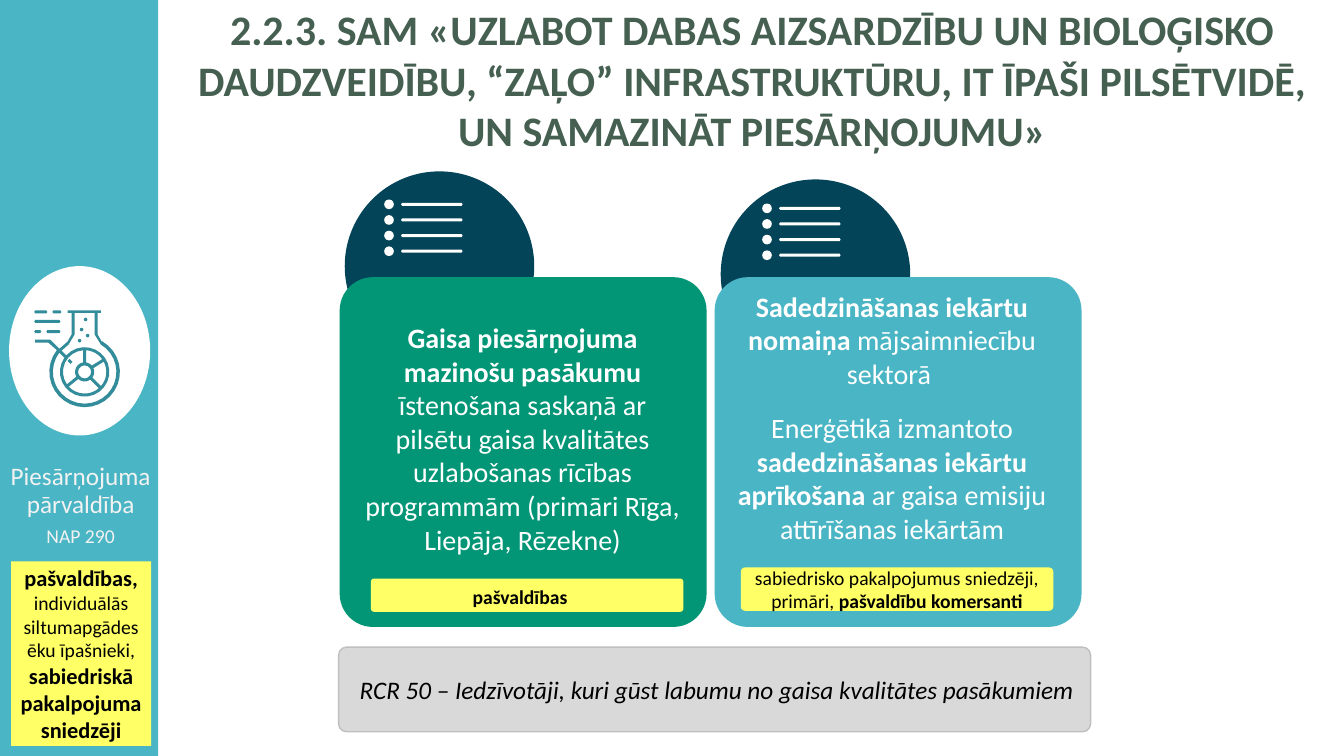
from dataclasses import dataclass
from math import cos, radians, sin

from pptx import Presentation
from pptx.dml.color import RGBColor
from pptx.enum.shapes import MSO_SHAPE
from pptx.enum.text import MSO_ANCHOR, PP_ALIGN
from pptx.util import Pt

PX = 9144  # 100 px to the inch


@dataclass(frozen=True)
class Theme:
    font: str = "Calibri"
    title: str = "455F51"
    navy: str = "044458"
    green: str = "029676"
    teal: str = "4AB5C4"
    dark_teal: str = "328C99"
    yellow: str = "FFFF66"
    grey: str = "D9D9D9"
    grey_line: str = "BFBFBF"
    white: str = "FFFFFF"
    off_white: str = "F2F2F2"
    black: str = "000000"
    title_size: int = 30
    card_size: int = 20
    body_size: int = 18
    strong_size: int = 16
    small_size: int = 14
    corner: float = 0.095


THEME = Theme()
BOLD = {"bold": True}


def emu(*lengths):
    return [round(length * PX) for length in lengths]


def style_shape(shape, fill, line=None):
    shape.shadow.inherit = False
    shape.fill.solid()
    shape.fill.fore_color.rgb = RGBColor.from_string(fill)
    if line:
        shape.line.color.rgb = RGBColor.from_string(line)
        shape.line.width = Pt(1)
    else:
        shape.line.fill.background()


def add_box(slide, kind, box, fill, line=None):
    shape = slide.shapes.add_shape(kind, *emu(*box))
    style_shape(shape, fill, line)
    if kind == MSO_SHAPE.ROUNDED_RECTANGLE:
        shape.adjustments[0] = THEME.corner
    return shape


def add_text_box(slide, box):
    return slide.shapes.add_textbox(*emu(*box))


def add_outline(slide, left, top, contours, fill):
    """Draw closed contours as one shape; a contour inside another is a hole."""
    placed = [[emu(left + x, top + y) for x, y in contour] for contour in contours]
    builder = slide.shapes.build_freeform(*placed[0][0])
    for index, contour in enumerate(placed):
        if index:
            builder.move_to(*contour[0])
        builder.add_line_segments(contour[1:], close=True)
    style_shape(builder.convert_to_shape(), fill)


def arc(x, y, radius, start, end, steps):
    angles = [radians(start + (end - start) * step / steps) for step in range(steps + 1)]
    return [(x + radius * cos(angle), y + radius * sin(angle)) for angle in angles]


def circle(x, y, radius, steps=12):
    return arc(x, y, radius, 0, 360, steps)[:-1]


def bar(left, right, y):
    return [(left, y), (left + 1, y - 1.5), (right - 1, y - 1.5),
            (right, y), (right - 1, y + 1.5), (left + 1, y + 1.5)]


def write(shape, paragraphs, size, color, bold=False, italic=False, align=PP_ALIGN.CENTER,
          anchor=MSO_ANCHOR.TOP, insets=(10, 5, 10, 5), gap=0, line_spacing=None):
    """Fill a shape with paragraphs, each a list of (text, run overrides)."""
    frame = shape.text_frame
    frame.word_wrap = True
    frame.vertical_anchor = anchor
    (frame.margin_left, frame.margin_top,
     frame.margin_right, frame.margin_bottom) = emu(*insets)
    for index, runs in enumerate(paragraphs):
        paragraph = frame.add_paragraph() if index else frame.paragraphs[0]
        paragraph.alignment = align
        paragraph.space_before = Pt(gap if index else 0)
        if line_spacing:
            paragraph.line_spacing = Pt(line_spacing)
        for text, override in runs:
            run = paragraph.add_run()
            run.text = text
            font = run.font
            font.name = THEME.font
            font.size = Pt(override.get("size", size))
            font.bold = override.get("bold", bold)
            font.italic = italic
            font.color.rgb = RGBColor.from_string(color)


def draw_flask_icon(slide, left, top):
    hub = (50, 61)
    outside = [(33, 0), (66, 0), (66, 2.5), (63, 2.5), (63, 24), (67, 31),
               *arc(*hub, 35, -60, 218, 24), (14, 32), (1, 32), (1, 29), (16, 29),
               (25, 38), (33, 31), (37, 24), (37, 2.5), (33, 2.5)]
    inside = [(40, 2.5), (40, 24), (34, 34), (27, 40), *arc(*hub, 24.5, 222, 575, 24),
              *arc(*hub, 31.5, 217, -59, 24), (60, 24), (60, 2.5)]
    spokes = (-90, -32, 45, 141, 270)
    sectors = [arc(*hub, 21.5, start + 4, end - 4, 8) + arc(*hub, 9.5, end - 9, start + 9, 6)
               for start, end in zip(spokes, spokes[1:])]
    pointer = [(35, 48), (38, 51), (36, 53), (33, 50)]
    dashes = [bar(*dash) for dash in ((0, 13, 1.5), (18, 27, 1.5), (0, 26, 11),
                                      (0, 7, 21), (12, 26, 21))]
    bubbles = [circle(x, y, 1.8, 8) for x, y in ((45, 30), (53, 25), (47, 19), (51, 9))]
    add_outline(slide, left, top,
                [outside, inside, *sectors, pointer, circle(*hub, 6.5), *dashes, *bubbles],
                THEME.dark_teal)


def draw_list_icon(slide, left, top):
    rows = [4.7 + 15.5 * row for row in range(4)]
    contours = [circle(5, y, 4.8) for y in rows] + [bar(17, 78, y) for y in rows]
    add_outline(slide, left, top, contours, THEME.white)


def draw_card(slide, box, fill, badge, icon):
    """Place a card with its badge and list icon, given as offsets from its corner."""
    left, top = box[:2]
    add_box(slide, MSO_SHAPE.OVAL, (left + badge[0], top + badge[1], 188, 188), THEME.navy)
    add_box(slide, MSO_SHAPE.ROUNDED_RECTANGLE, box, fill)
    draw_list_icon(slide, left + icon[0], top + icon[1])


def draw_cards(slide, left, top):
    second = left + 372
    draw_card(slide, (left, top, 364, 347), THEME.green, (5, -105), (44, -77))
    draw_card(slide, (second, top, 364, 347), THEME.teal, (6, -97), (47, -73))
    write(add_text_box(slide, (left + 8, top + 38, 347, 246)),
          [[("Gaisa piesārņojuma mazinošu pasākumu ", BOLD),
            ("īstenošana saskaņā ar pilsētu gaisa kvalitātes uzlabošanas rīcības "
             "programmām (primāri Rīga, Liepāja, Rēzekne)", {})]],
          THEME.card_size, THEME.white)
    write(add_text_box(slide, (second, top + 7, 352, 266)),
          [[("Sadedzināšanas iekārtu nomaiņa ", BOLD), ("mājsaimniecību sektorā ", {})],
           [("Enerģētikā izmantoto ", {}), ("sadedzināšanas iekārtu aprīkošana ", BOLD),
            ("ar gaisa emisiju attīrīšanas iekārtām", {})]],
          THEME.card_size, THEME.white, gap=14.6)


def draw_labels(slide, left, top):
    add_box(slide, MSO_SHAPE.ROUNDED_RECTANGLE, (left, top + 11, 310, 33), THEME.yellow)
    write(add_text_box(slide, (left - 5, top + 11, 311, 32)),
          [[("pašvaldības", BOLD), (" ", {"size": THEME.strong_size})]],
          THEME.small_size, THEME.black, insets=(5, 3, 5, 3))
    label = add_box(slide, MSO_SHAPE.ROUNDED_RECTANGLE, (left + 367, top, 310, 43), THEME.yellow)
    write(label, [[("sabiedrisko pakalpojumus sniedzēji, primāri, ", {}),
                   ("pašvaldību komersanti", BOLD)]],
          THEME.small_size, THEME.black, anchor=MSO_ANCHOR.MIDDLE)


def draw_sidebar(slide, box):
    left, top, width, _ = box
    strong = {"bold": True, "size": THEME.strong_size}
    add_box(slide, MSO_SHAPE.RECTANGLE, box, THEME.teal)
    add_box(slide, MSO_SHAPE.OVAL, (left + 10, top + 264, 140, 168), THEME.white)
    draw_flask_icon(slide, left + 35, top + 308)
    write(add_text_box(slide, (left, top + 454, width + 4, 94)),
          [[("Piesārņojuma pārvaldība", {})], [("NAP 290", {"size": THEME.small_size})]],
          THEME.body_size, THEME.off_white, anchor=MSO_ANCHOR.MIDDLE, line_spacing=20)
    audience = add_box(slide, MSO_SHAPE.RECTANGLE, (left + 12, top + 557, 139, 183), THEME.yellow)
    write(audience,
          [[("pašvaldības,", strong)],
           [("individuālās siltumapgādes ēku īpašnieki, ", {}),
            ("sabiedriskā pakalpojuma sniedzēji", strong)]],
          THEME.small_size, THEME.black, insets=(5, 3, 5, 3))


def draw_title(slide, box):
    write(add_text_box(slide, box),
          [[("2.2.3. SAM «UZLABOT DABAS AIZSARDZĪBU UN BIOLOĢISKO DAUDZVEIDĪBU, “ZAĻO” "
             "INFRASTRUKTŪRU, IT ĪPAŠI PILSĒTVIDĒ, UN SAMAZINĀT PIESĀRŅOJUMU»", {})]],
          THEME.title_size, THEME.title, bold=True)


def draw_indicator(slide, box):
    left, top, width, _ = box
    add_box(slide, MSO_SHAPE.ROUNDED_RECTANGLE, box, THEME.grey, THEME.grey_line)
    write(add_text_box(slide, (left + 11, top + 22, width - 7, 40)),
          [[("RCR 50 – Iedzīvotāji, kuri gūst labumu no gaisa kvalitātes pasākumiem", {})]],
          THEME.body_size, THEME.black, italic=True, align=PP_ALIGN.JUSTIFY)


def main():
    presentation = Presentation()
    presentation.slide_width, presentation.slide_height = emu(4000 / 3, 750)
    slide = presentation.slides.add_slide(presentation.slide_layouts[6])
    draw_cards(slide, 337, 275)
    draw_title(slide, (160, -1, 1173, 162))
    draw_indicator(slide, (336, 642, 746, 84))
    draw_sidebar(slide, (-1, 0, 158, 750))
    draw_labels(slide, 368, 563)
    presentation.save("out.pptx")


if __name__ == "__main__":
    main()
